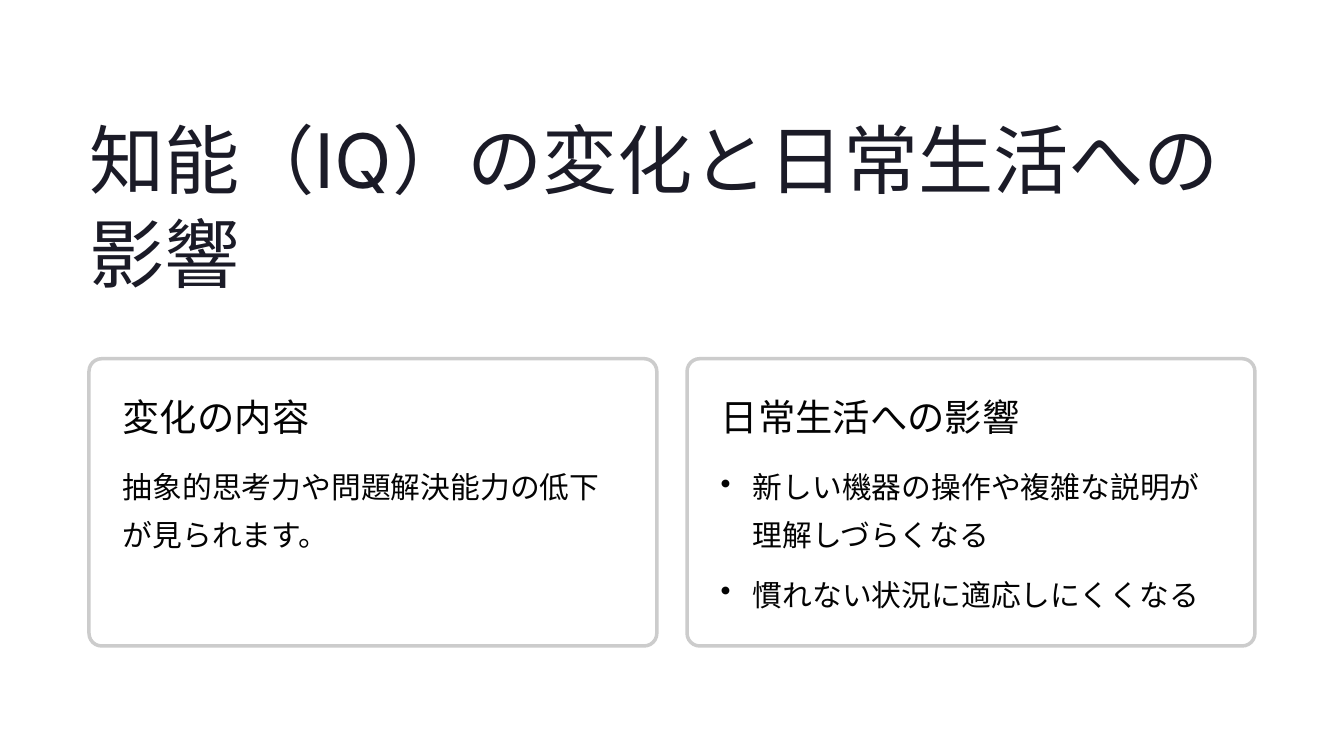
from lxml import etree
from pptx import Presentation
from pptx.dml.color import RGBColor
from pptx.enum.shapes import MSO_SHAPE
from pptx.oxml.ns import qn
from pptx.util import Inches, Pt

ROUND = MSO_SHAPE.ROUNDED_RECTANGLE
THEME = {
    "title": {"size": 64.5, "lead": 80.5, "font": "Inter", "color": "1B1B27"},
    "head": {"size": 32, "lead": 40, "font": "Inter", "color": "030303"},
    "body": {"size": 25.5, "lead": 41, "font": "Karla", "color": "030303"},
    "fill": "FFFFFF",
    "line": "CCCCCC",
}

deck = Presentation()
deck.slide_width, deck.slide_height = Inches(16), Inches(9)
slide = deck.slides.add_slide(deck.slide_layouts[6])


def write(text, left, top, width, height, style, wrap=True, bullet=False):
    box = slide.shapes.add_textbox(Inches(left), Inches(top), Inches(width), Inches(height))
    frame = box.text_frame
    frame.margin_left = frame.margin_top = frame.margin_right = frame.margin_bottom = 0
    frame.word_wrap = wrap
    para = frame.paragraphs[0]
    para.line_spacing = Pt(style["lead"])
    run = para.add_run()
    run.text = text
    run.font.name = style["font"]
    run.font.size = Pt(style["size"])
    run.font.color.rgb = RGBColor.from_string(style["color"])
    if bullet:
        props = para._p.get_or_add_pPr()
        props.set("marL", str(Inches(0.38)))
        props.set("indent", str(-Inches(0.38)))
        etree.SubElement(props, qn("a:buChar")).set("char", "•")


EDGE, WIDE, GAP, PAD = 1.06, 6.76, 0.36, 0.4
TOP, TALL = 4.27, 3.42
INNER = WIDE - 2 * PAD
BODY = TOP + 1.17

write("知能（IQ）の変化と日常生活への影響", EDGE, 1.31, 13.89, 2.24, THEME["title"])

cards = [
    ("変化の内容", False, [("抽象的思考力や問題解決能力の低下が見られます。", 2)]),
    ("日常生活への影響", True, [
        ("新しい機器の操作や複雑な説明が理解しづらくなる", 2),
        ("慣れない状況に適応しにくくなる", 1),
    ]),
]

for col, (head, bullet, items) in enumerate(cards):
    left = EDGE + col * (WIDE + GAP)
    card = slide.shapes.add_shape(ROUND, Inches(left), Inches(TOP), Inches(WIDE), Inches(TALL))
    card.adjustments[0] = 0.044
    card.shadow.inherit = False
    card.fill.solid()
    card.fill.fore_color.rgb = RGBColor.from_string(THEME["fill"])
    tint = card.fill._xPr.find(qn("a:solidFill"))[0]
    etree.SubElement(tint, qn("a:alpha")).set("val", "95000")
    card.line.color.rgb = RGBColor.from_string(THEME["line"])
    card.line.width = Pt(3)

    write(head, left + PAD, TOP + PAD, 4.48, 0.56, THEME["head"], wrap=False)
    top = BODY
    for text, rows in items:
        tall = rows * 0.57
        write(text, left + PAD, top, INNER, tall, THEME["body"], wrap=rows > 1, bullet=bullet)
        top += tall + 0.14

deck.save("out.pptx")
